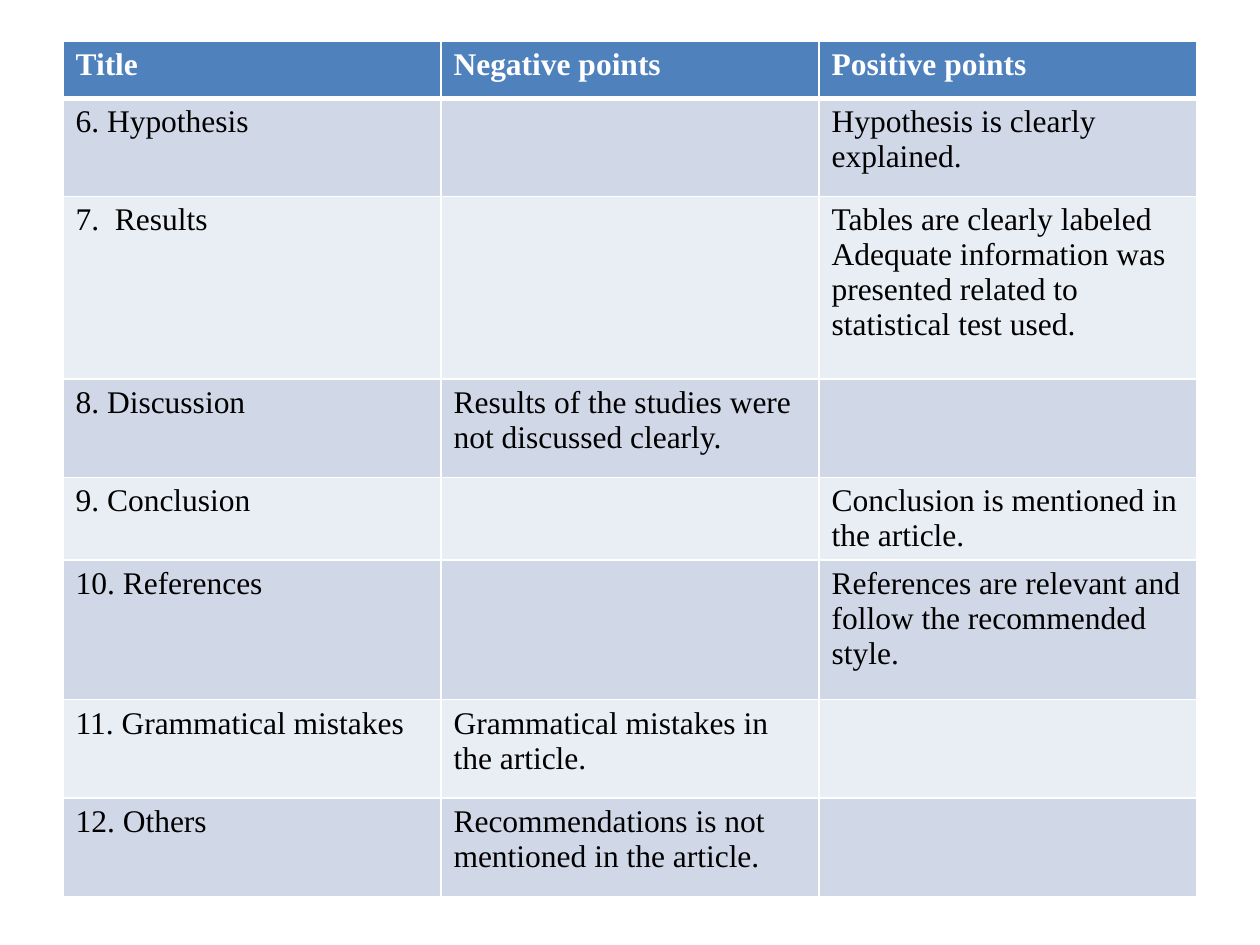
from dataclasses import dataclass

import pptx
import pptx.dml.color
import pptx.oxml.ns
import pptx.util
from lxml import etree
from pptx.util import Inches

COLORS = {
    "header": "4F81BD",
    "odd_band": "D0D8E8",
    "even_band": "E9EDF4",
    "border": "FFFFFF",
    "header_text": "FFFFFF",
    "body_text": "000000",
}
FONT = "Times New Roman"
COLUMN_WIDTH = 3


@dataclass
class ReviewRow:
    height: float
    title: str
    negative: str = ""
    positive: str = ""


ROWS = [
    ReviewRow(0.45, "Title", "Negative points", "Positive points"),
    ReviewRow(0.78, "6. Hypothesis", positive="Hypothesis is clearly explained."),
    ReviewRow(1.45, "7.  Results", positive="Tables are clearly labeled\n"
              "Adequate information was presented related to statistical test used."),
    ReviewRow(0.78, "8. Discussion",
              negative="Results of the studies were not discussed clearly."),
    ReviewRow(0.65, "9. Conclusion", positive="Conclusion is mentioned in the article."),
    ReviewRow(1.11, "10. References",
              positive="References are relevant and follow the recommended style."),
    ReviewRow(0.78, "11. Grammatical mistakes",
              negative="Grammatical mistakes in the article."),
    ReviewRow(0.78, "12. Others",
              negative="Recommendations is not mentioned in the article."),
]


def rgb(name: str) -> pptx.dml.color.RGBColor:
    return pptx.dml.color.RGBColor.from_string(COLORS[name])


def set_borders(cell, top: float, bottom: float) -> None:
    """Draw the four cell borders, with top and bottom widths in points."""
    qn = pptx.oxml.ns.qn
    tc_pr = cell._tc.get_or_add_tcPr()
    for side, width in (("L", 1), ("R", 1), ("T", top), ("B", bottom)):
        ln = etree.SubElement(tc_pr, qn(f"a:ln{side}"), w=str(pptx.util.Pt(width)))
        fill = etree.SubElement(ln, qn("a:solidFill"))
        etree.SubElement(fill, qn("a:srgbClr"), val=COLORS["border"])


def write_cell(cell, text: str, color: str, bold: bool) -> None:
    tf = cell.text_frame
    for i, line in enumerate(text.split("\n")):
        p = tf.add_paragraph() if i else tf.paragraphs[0]
        p.font.size = pptx.util.Pt(18)
        if not line:
            continue
        r = p.add_run()
        r.text = line
        r.font.name = FONT
        r.font.size = pptx.util.Pt(18)
        r.font.bold = bold
        r.font.color.rgb = rgb(color)


def draw_row(table, index: int, row: ReviewRow) -> None:
    is_header = index == 0
    band = "header" if is_header else "odd_band" if index % 2 else "even_band"
    table.rows[index].height = Inches(row.height)
    for col, text in enumerate((row.title, row.negative, row.positive)):
        cell = table.cell(index, col)
        set_borders(cell, top=3 if index == 1 else 1, bottom=3 if is_header else 1)
        cell.fill.solid()
        cell.fill.fore_color.rgb = rgb(band)
        write_cell(cell, text, "header_text" if is_header else "body_text", is_header)


def main() -> None:
    prs = pptx.Presentation()
    prs.slide_width, prs.slide_height = Inches(10), Inches(7.5)
    s = prs.slides.add_slide(prs.slide_layouts[6])
    table = s.shapes.add_table(
        len(ROWS), 3, Inches(0.5), Inches(0.33), Inches(3 * COLUMN_WIDTH),
        Inches(sum(row.height for row in ROWS)),
    ).table
    for column in table.columns:
        column.width = Inches(COLUMN_WIDTH)
    for index, row in enumerate(ROWS):
        draw_row(table, index, row)
    prs.save("out.pptx")


if __name__ == "__main__":
    main()
